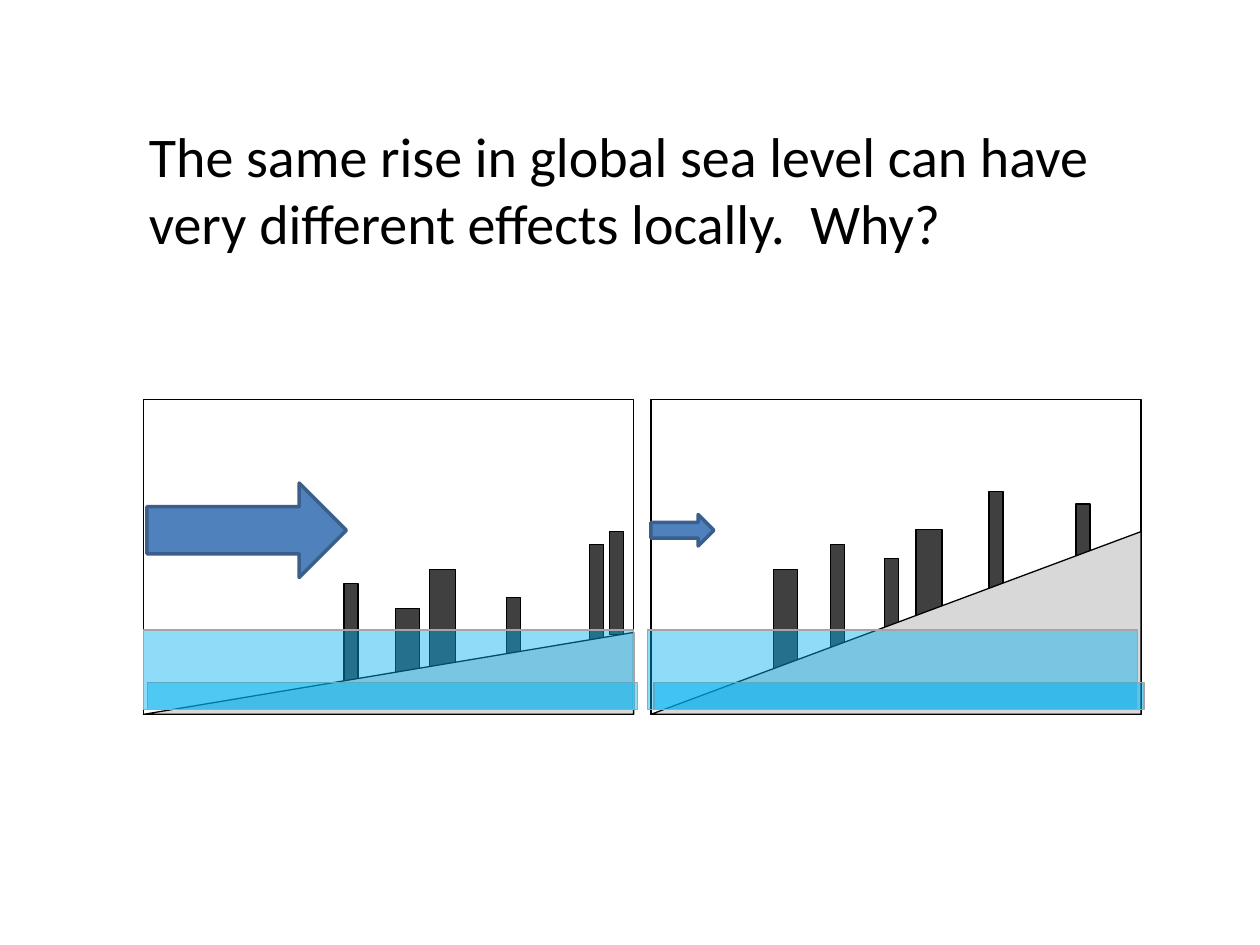
from lxml.etree import SubElement
from pptx import Presentation
from pptx.dml.color import RGBColor
from pptx.enum.shapes import MSO_SHAPE
from pptx.enum.text import MSO_AUTO_SIZE
from pptx.oxml.ns import qn
from pptx.util import Pt

PANEL_TOP, PANEL_WIDTH, PANEL_HEIGHT = 228.2, 280, 180
BUILDING_HEIGHT = 59
LAND = {"fill": "D8D8D8", "line": "000000", "weight": 0.75}
SKY = {**LAND, "fill": "FFFFFF"}
BUILDING = {**LAND, "fill": "404040"}
WATER = {"fill": "00B0F0", "line": "A5A5A5", "weight": 0.75}
ARROW = {"fill": "4F81BD", "line": "3A5F8C", "weight": 2}

# Each coast: panel left, top of the slope, buildings as (left, top, width)
COASTS = [
    (82.1, 361.4, [(196.6, 333.4, 8), (245.5, 325.4, 15), (337, 311, 8),
                   (348.5, 303.8, 8), (289.4, 341.3, 8), (226.1, 347.8, 13.7)]),
    (372, 303.8, [(565.2, 280.8, 8), (505.4, 319, 8), (442.1, 325.4, 13.7),
                  (474.5, 311, 8), (523.4, 302.4, 15), (614.9, 288, 8)]),
]


def colour(value):
    return RGBColor.from_string(value)


class SlideBuilder:
    """Holds the text style and the current slide."""

    font = {"name": "Calibri", "size": Pt(32), "bold": False}

    def __init__(self, page):
        self.page = page

    def group(self):
        return self.page.shapes.add_group_shape()

    def shape(self, parent, kind, left, top, width, height, look, alpha=None):
        item = parent.shapes.add_shape(kind, Pt(left), Pt(top), Pt(width), Pt(height))
        item.shadow.inherit = False
        item.fill.solid()
        item.fill.fore_color.rgb = colour(look["fill"])
        item.line.color.rgb = colour(look["line"])
        item.line.width = Pt(look["weight"])
        if alpha is not None:
            tint = item.fill._xPr.find(".//" + qn("a:srgbClr"))
            SubElement(tint, qn("a:alpha")).set("val", str(alpha * 1000))
        return item

    def coast(self, left, slope_top, buildings):
        panel = self.group()
        self.shape(panel, MSO_SHAPE.RECTANGLE, left, PANEL_TOP,
                   PANEL_WIDTH, PANEL_HEIGHT, SKY)
        for x, top, width in buildings:
            self.shape(panel, MSO_SHAPE.RECTANGLE, x, top, width,
                       BUILDING_HEIGHT, BUILDING)
        slope = self.shape(panel, MSO_SHAPE.ISOSCELES_TRIANGLE, left, slope_top,
                           PANEL_WIDTH, PANEL_TOP + PANEL_HEIGHT - slope_top, LAND)
        slope.adjustments[0] = 1

    def water(self, parent, left, top, height, alpha):
        self.shape(parent, MSO_SHAPE.RECTANGLE, left, top, PANEL_WIDTH, height,
                   WATER, alpha)

    def text(self, words, left, top, width, height):
        box = self.page.shapes.add_textbox(Pt(left), Pt(top), Pt(width), Pt(height))
        box.text_frame.word_wrap = True
        box.text_frame.auto_size = MSO_AUTO_SIZE.SHAPE_TO_FIT_TEXT
        span = box.text_frame.paragraphs[0].add_run()
        span.text = words
        for name, value in self.font.items():
            setattr(span.font, name, value)
        span.font.color.rgb = colour("000000")


def main():
    deck = Presentation()
    deck.slide_width, deck.slide_height = Pt(720), Pt(540)
    page = deck.slides.add_slide(deck.slide_layouts[6])
    builder = SlideBuilder(page)

    # Gentle and steep coasts
    for coast in COASTS:
        builder.coast(*coast)

    # Present sea level
    for left, alpha in [(84.2, 44), (373.7, 54)]:
        builder.water(page, left, 390.2, 15.4, alpha)

    # Risen sea level
    rise = builder.group()
    for left in (82.1, 370.1):
        builder.water(rise, left, 360, 45.4, 44)

    # Question
    builder.text("The same rise in global sea level can have very different "
                 "effects locally.  Why?", 78, 66, 576, 85)

    # How far the sea moves inland
    arrows = builder.group()
    for left, top, width, height in [(84, 276, 114, 54), (372, 294, 36, 18)]:
        builder.shape(arrows, MSO_SHAPE.RIGHT_ARROW, left, top, width, height, ARROW)

    deck.save("out.pptx")


if __name__ == "__main__":
    main()
